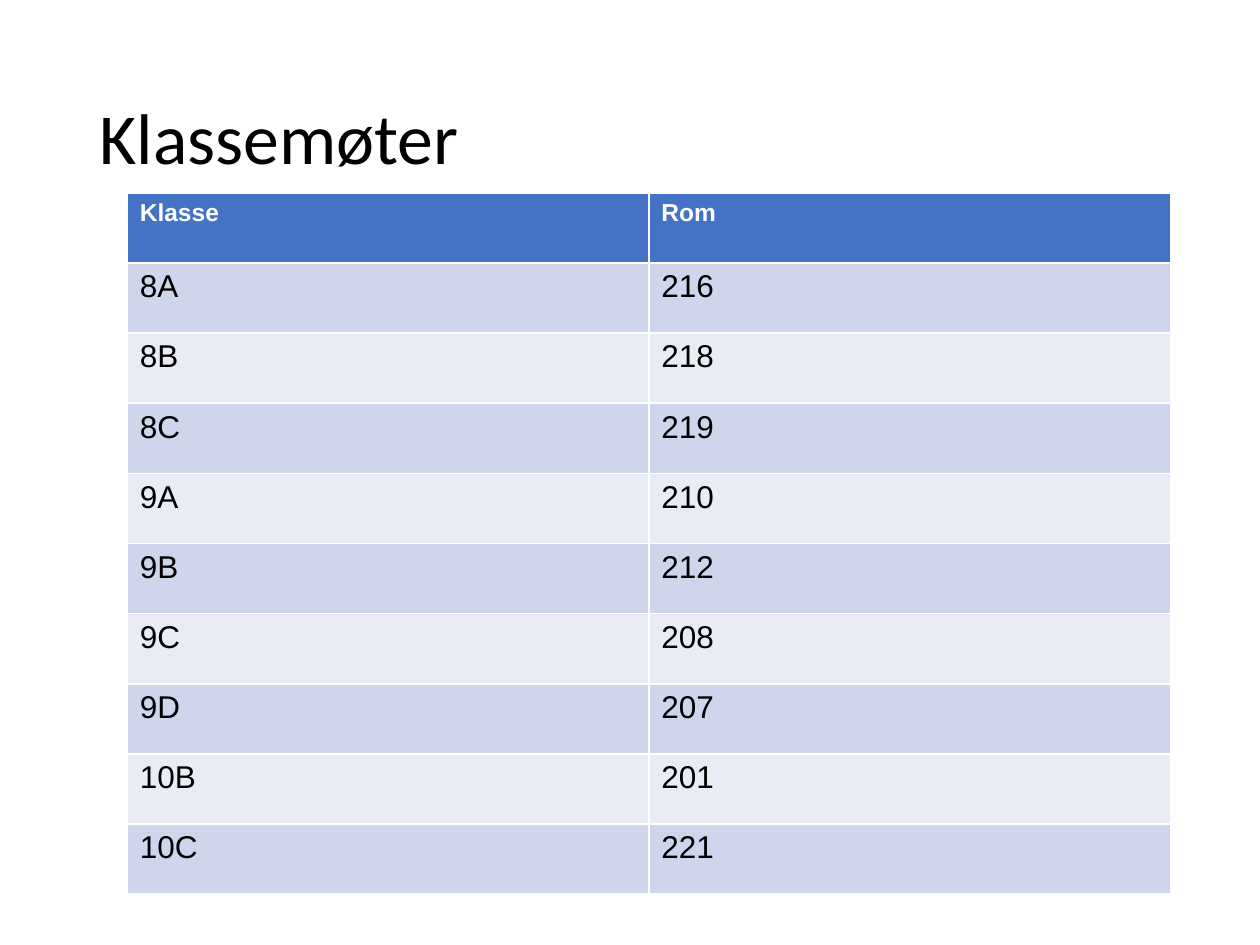
from pptx import Presentation
from pptx.dml.color import RGBColor
from pptx.enum.text import MSO_ANCHOR, MSO_AUTO_SIZE, PP_ALIGN
from pptx.util import Inches, Pt

LEFT = PP_ALIGN.LEFT
MIDDLE = MSO_ANCHOR.MIDDLE
NO_AUTOFIT = MSO_AUTO_SIZE.NONE

TITLE = "Klassemøter"
HEADER = ("Klasse", "Rom")
ROOMS = [
    ("8A", "216"),
    ("8B", "218"),
    ("8C", "219"),
    ("9A", "210"),
    ("9B", "212"),
    ("9C", "208"),
    ("9D", "207"),
    ("10B", "201"),
    ("10C", "221"),
]
COLORS = {
    "text": "000000",
    "header_text": "FFFFFF",
    "header": "4472C4",
    "odd": "CFD5EA",
    "even": "E9EBF5",
}
TITLE_BOX = (0.69, 0.4, 8.62, 1.45)
TABLE_BOX = (1.01, 1.53, 8.28, 5.57)


def color(name):
    return RGBColor.from_string(COLORS[name])


def set_font(p, name, size, color_name, bold=False):
    p.font.name = name
    p.font.size = Pt(size)
    p.font.bold = bold
    p.font.color.rgb = color(color_name)


def add_title(s):
    sp = s.shapes.title
    sp.left, sp.top, sp.width, sp.height = map(Inches, TITLE_BOX)
    tf = sp.text_frame
    tf.text = TITLE
    tf.auto_size = NO_AUTOFIT
    tf.vertical_anchor = MIDDLE
    p = tf.paragraphs[0]
    p.alignment = LEFT
    p.line_spacing = 0.9
    set_font(p, "Calibri", 41, "text")


def add_room_table(s):
    rows = [HEADER] + ROOMS
    table = s.shapes.add_table(len(rows), len(HEADER), *map(Inches, TABLE_BOX)).table
    for i, row in enumerate(rows):
        is_header = i == 0
        fill = "header" if is_header else "odd" if i % 2 else "even"
        for j, text in enumerate(row):
            cell = table.cell(i, j)
            cell.text = text
            cell.fill.solid()
            cell.fill.fore_color.rgb = color(fill)
            p = cell.text_frame.paragraphs[0]
            if is_header:
                set_font(p, "Arial", 14, "header_text", bold=True)
            else:
                set_font(p, "Arial", 18, "text")


def main():
    prs = Presentation()
    prs.slide_width, prs.slide_height = Inches(10), Inches(7.5)
    s = prs.slides.add_slide(prs.slide_layouts[5])
    add_title(s)
    add_room_table(s)
    prs.save("out.pptx")


if __name__ == "__main__":
    main()
